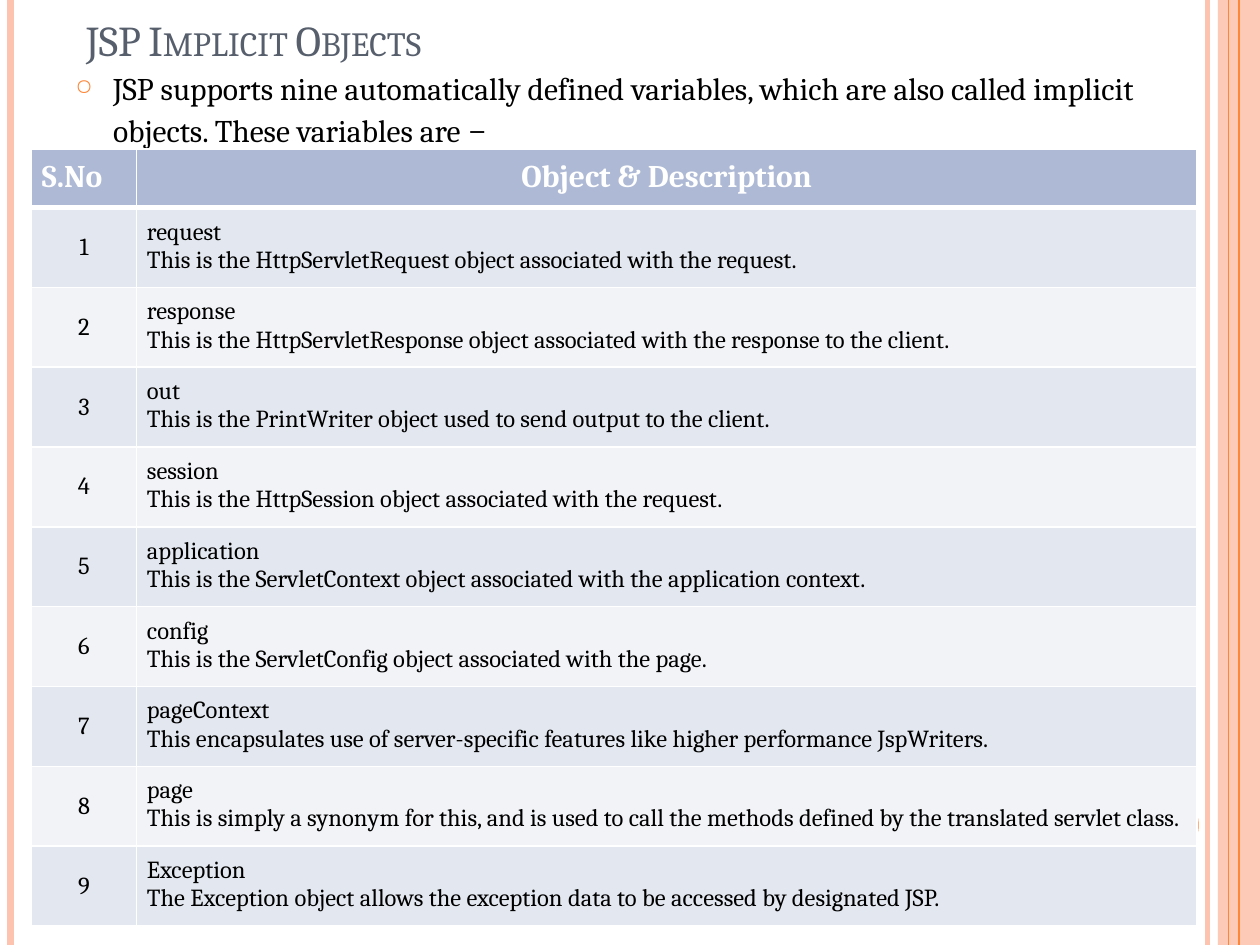
"""Build the slide that lists the nine JSP implicit objects."""
from lxml.etree import SubElement
from pptx import Presentation
from pptx.dml.color import RGBColor as RGB
from pptx.enum.shapes import MSO_CONNECTOR as LINE, MSO_SHAPE as SHAPE
from pptx.enum.text import MSO_ANCHOR as ANCHOR, PP_ALIGN as ALIGN
from pptx.oxml.ns import qn
from pptx.util import Pt

COLORS = {"peach": "FEC3AE", "orange": "FE8637", "slate": "575F6D", "head": "AEBAD5",
          "odd": "E3E7EF", "even": "F2F3F7", "white": "FFFFFF", "black": "000000"}
ITEMS = [
    ("request", "This is the HttpServletRequest object associated with the request."),
    ("response", "This is the HttpServletResponse object associated with the response to the client."),
    ("out", "This is the PrintWriter object used to send output to the client."),
    ("session", "This is the HttpSession object associated with the request."),
    ("application", "This is the ServletContext object associated with the application context."),
    ("config", "This is the ServletConfig object associated with the page."),
    ("pageContext", "This encapsulates use of server-specific features like higher performance JspWriters."),
    ("page", "This is simply a synonym for this, and is used to call the methods defined by the "
             "translated servlet class."),
    ("Exception", "The Exception object allows the exception data to be accessed by designated JSP."),
]


def style(para, size, color, bold=False):
    for run in para.runs:
        font = run.font
        font.name, font.size, font.bold = "Cambria", Pt(size), bold
        font.color.rgb = RGB.from_string(COLORS[color])


def fill_cell(cell, lines, fill, size, color, align, bold=False, base=1):
    cell.fill.solid()
    cell.fill.fore_color.rgb = RGB.from_string(COLORS[fill])
    cell.margin_left = cell.margin_right = cell.margin_top = cell.margin_bottom = Pt(6)
    cell.text_frame.text = "\n".join(lines)
    for para in cell.text_frame.paragraphs:
        para.alignment = align
        style(para, size, color, bold)
    props = cell._tc.get_or_add_tcPr()
    for spot, (side, width) in enumerate([("L", 1), ("R", 1), ("T", 1), ("B", base)]):
        edge = props.makeelement(qn(f"a:ln{side}"), {"w": str(Pt(width))})
        paint = SubElement(edge, qn("a:solidFill"))
        SubElement(paint, qn("a:srgbClr"), val=COLORS["white"])
        props.insert(spot, edge)


deck = Presentation()
deck.slide_width, deck.slide_height = Pt(720), Pt(540)
slide = deck.slides.add_slide(deck.slide_layouts[5])
shapes = slide.shapes

band = shapes.add_shape(SHAPE.RECTANGLE, Pt(696), 0, Pt(24), Pt(540))
dot = shapes.add_shape(SHAPE.OVAL, Pt(642), Pt(450), Pt(43), Pt(43))
for shape, color in [(band, "peach"), (dot, "orange")]:
    shape.shadow.inherit = False
    shape.fill.solid()
    shape.fill.fore_color.rgb = RGB.from_string(COLORS[color])
    shape.line.fill.background()
tint = band.fill._xPr.find(".//" + qn("a:srgbClr"))
SubElement(tint, qn("a:alpha"), val="87000")

for x, width, color in [(690, 3, "peach"), (6, 4.5, "peach"),
                        (708, 1.5, "orange"), (702, 0.75, "orange")]:
    rule = shapes.add_connector(LINE.STRAIGHT, Pt(x), 0, Pt(x), Pt(540))
    rule.line.width = Pt(width)
    rule.line.color.rgb = RGB.from_string(COLORS[color])
    SubElement(rule._element.spPr, qn("a:effectLst"))

title = shapes.title
title.left, title.top, title.width, title.height = Pt(42), 0, Pt(654), Pt(72)
frame = title.text_frame
frame.text = "JSP Implicit Objects"
frame.vertical_anchor = ANCHOR.BOTTOM
frame.margin_bottom = Pt(35)
para = frame.paragraphs[0]
para.alignment = ALIGN.LEFT
style(para, 24.3, "slate")
para.runs[0]._r.get_or_add_rPr().set("cap", "small")

frame = shapes.add_textbox(Pt(36), Pt(36), Pt(648), Pt(492)).text_frame
frame.word_wrap = True
para = frame.paragraphs[0]
para.text = ("JSP supports nine automatically defined variables, which are also called "
             "implicit objects. These variables are ")
para.add_run().text = "−"
para.space_before = Pt(6)
style(para, 18, "black")
para.runs[1].font.size = Pt(20)
props = para._p.get_or_add_pPr()
props.set("marL", str(Pt(21.6)))
props.set("indent", str(-Pt(21.6)))
paint = SubElement(props, qn("a:buClr"))
SubElement(paint, qn("a:srgbClr"), val=COLORS["orange"])
SubElement(props, qn("a:buSzPct"), val="70000")
SubElement(props, qn("a:buChar"), char="○")

table = shapes.add_table(len(ITEMS) + 1, 2, Pt(18), Pt(85), Pt(666), Pt(430)).table
table.columns[0].width, table.columns[1].width = Pt(60), Pt(606)
table.rows[0].height = Pt(32.5)
fill_cell(table.cell(0, 0), ["S.No"], "head", 18, "white", ALIGN.LEFT, True, 3)
fill_cell(table.cell(0, 1), ["Object & Description"], "head", 18, "white", ALIGN.CENTER, True, 3)
for row, item in enumerate(ITEMS, 1):
    table.rows[row].height = Pt(44.2)
    fill = "odd" if row % 2 else "even"
    fill_cell(table.cell(row, 0), [str(row)], fill, 14, "black", ALIGN.CENTER)
    table.cell(row, 0).vertical_anchor = ANCHOR.MIDDLE
    fill_cell(table.cell(row, 1), item, fill, 14, "black", ALIGN.JUSTIFY)

deck.save("out.pptx")
